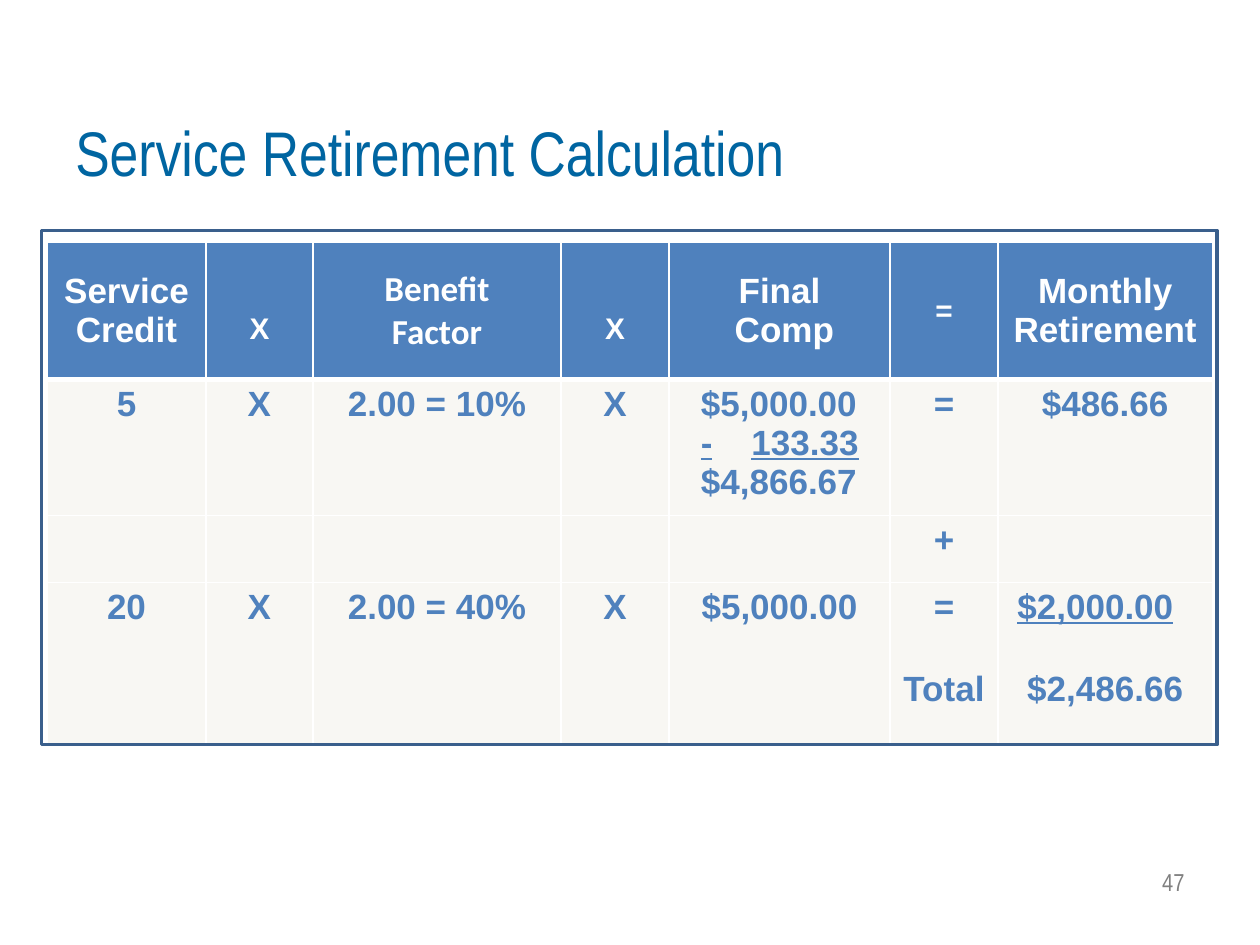
import pptx
import pptx.dml.color
import pptx.enum.shapes
import pptx.enum.text
import pptx.oxml
import pptx.oxml.ns
import pptx.util
from lxml import etree

Cm, Pt = pptx.util.Cm, pptx.util.Pt
ALIGN = pptx.enum.text.PP_ALIGN
ANCHOR = pptx.enum.text.MSO_ANCHOR
qn = pptx.oxml.ns.qn

WHITE, BLUE, CREAM = "FFFFFF", "4F81BD", "F8F7F3"
COLUMN_WIDTHS = [3.2, 2.16, 5, 2.18, 4.45, 2.18, 4.32]
ROW_HEIGHTS = [2.77, 2.74, 1.35, 3.28]
HEADINGS = [["Service Credit"], ["X"], ["Benefit", "Factor"], ["X"],
            ["Final", " Comp"], ["="], ["Monthly", "Retirement"]]
CALCULATIONS = [
    [["5"], ["X"], ["2.00 = 10%"], ["X"],
     ["$5,000.00", "-\t133.33", "$4,866.67"], ["="], ["$486.66"]],
    [[], [], [], [], [], ["+"], []],
    [["20"], ["X"], ["2.00 = 40%"], ["X"], ["$5,000.00"],
     ["=", "Total"], ["$2,000.00\t", "$2,486.66"]],
]
TOTAL_GAP = 24.5


def color(value):
    """Turn a hex string into a colour."""
    return pptx.dml.color.RGBColor.from_string(value)


def add_run(paragraph, text, size, font, tint, bold=False, underline=False):
    """Add one formatted run to a paragraph."""
    run = paragraph.add_run()
    run.text = text
    run.font.size = Pt(size)
    run.font.name = font
    run.font.bold = bold
    run.font.underline = underline
    run.font.color.rgb = color(tint)


def add_right_tab(paragraph, position):
    """Left-align a paragraph and give it a right tab stop."""
    paragraph.alignment = ALIGN.LEFT
    stops = etree.SubElement(paragraph._p.get_or_add_pPr(), qn("a:tabLst"))
    etree.SubElement(stops, qn("a:tab"), pos=str(Cm(position)), algn="r")


def set_borders(cell, bottom):
    """Draw white borders, with the bottom one of the given width."""
    properties = cell._tc.get_or_add_tcPr()
    for index, (side, width) in enumerate([("L", 1), ("R", 1), ("T", 1), ("B", bottom)]):
        border = pptx.oxml.parse_xml(
            f'<a:ln{side} xmlns:a="http://schemas.openxmlformats.org/drawingml/2006/main" '
            f'w="{Pt(width)}"><a:solidFill><a:srgbClr val="{WHITE}"/></a:solidFill></a:ln{side}>')
        properties.insert(index, border)


def fill_cell(cell, lines, background, tint, size=20, font="Arial", tab=None, bottom=1):
    """Fill one cell with lines of text, underlining those with a tab."""
    cell.fill.solid()
    cell.fill.fore_color.rgb = color(background)
    set_borders(cell, bottom)
    cell.margin_top = cell.margin_bottom = Cm(0.1)
    for index, line in enumerate(lines):
        frame = cell.text_frame
        paragraph = frame.add_paragraph() if index else frame.paragraphs[0]
        paragraph.alignment = ALIGN.CENTER
        if "\t" in line:
            add_right_tab(paragraph, tab)
        add_run(paragraph, line, size, font, tint, True, "\t" in line)


def add_text_line(slide, box, text, size, tint, alignment, spacing=1.0):
    """Add a single line of text in the given box."""
    frame = slide.shapes.add_textbox(*map(Cm, box)).text_frame
    frame.word_wrap = True
    paragraph = frame.paragraphs[0]
    paragraph.alignment = alignment
    paragraph.line_spacing = spacing
    add_run(paragraph, text, size, "Arial Narrow", tint)


def add_calculation(slide, left, top, width, height):
    """Add the framed calculation table in the given box."""
    grid = slide.shapes.add_table(
        1 + len(CALCULATIONS), len(HEADINGS), Cm(left + 0.11), Cm(top + 0.23),
        Cm(sum(COLUMN_WIDTHS)), Cm(sum(ROW_HEIGHTS))).table
    for column, column_width in zip(grid.columns, COLUMN_WIDTHS):
        column.width = Cm(column_width)
    for row, row_height in zip(grid.rows, ROW_HEIGHTS):
        row.height = Cm(row_height)

    for index, lines in enumerate(HEADINGS):
        heading = grid.cell(0, index)
        fill_cell(heading, lines, BLUE, WHITE, 17 if len(lines[0]) == 1 else 20,
                  "Calibri" if lines[0] == "Benefit" else "Arial", bottom=3)
        heading.vertical_anchor = ANCHOR.MIDDLE
        if lines == ["X"]:
            heading.margin_top = Cm(0.85)

    tabs = {4: 3.18, 6: 3.5}
    for row_index, calculation in enumerate(CALCULATIONS, 1):
        for index, lines in enumerate(calculation):
            fill_cell(grid.cell(row_index, index), lines, CREAM, BLUE, tab=tabs.get(index))

    deduction = grid.cell(1, 4)
    deduction.margin_left, deduction.margin_right = Cm(0.64), Cm(0.25)
    for paragraph in deduction.text_frame.paragraphs:
        paragraph.alignment = ALIGN.LEFT
    total = grid.cell(3, 6)
    total.margin_left = total.margin_right = Cm(0.39)
    for cell in (grid.cell(3, 5), total):
        cell.text_frame.paragraphs[1].space_before = Pt(TOTAL_GAP)

    frame = slide.shapes.add_shape(
        pptx.enum.shapes.MSO_SHAPE.RECTANGLE, Cm(left), Cm(top), Cm(width), Cm(height))
    frame.shadow.inherit = False
    frame.fill.background()
    frame.line.color.rgb = color("3A5F8C")
    frame.line.width = Pt(2)


def main():
    """Build and save the slide."""
    deck = pptx.Presentation()
    deck.slide_width, deck.slide_height = Cm(25.4), Cm(19.05)
    slide = deck.slides.add_slide(deck.slide_layouts[6])
    add_text_line(slide, (18.21, 17.35, 5.92, 0.86), "47", 14, "808080", ALIGN.RIGHT)
    add_text_line(slide, (1.27, 2.34, 19.05, 1.65), "Service Retirement Calculation",
                  36, "0065A1", ALIGN.LEFT, 0.9)
    add_calculation(slide, 0.84, 4.65, 23.7, 10.36)
    deck.save("out.pptx")


if __name__ == "__main__":
    main()
